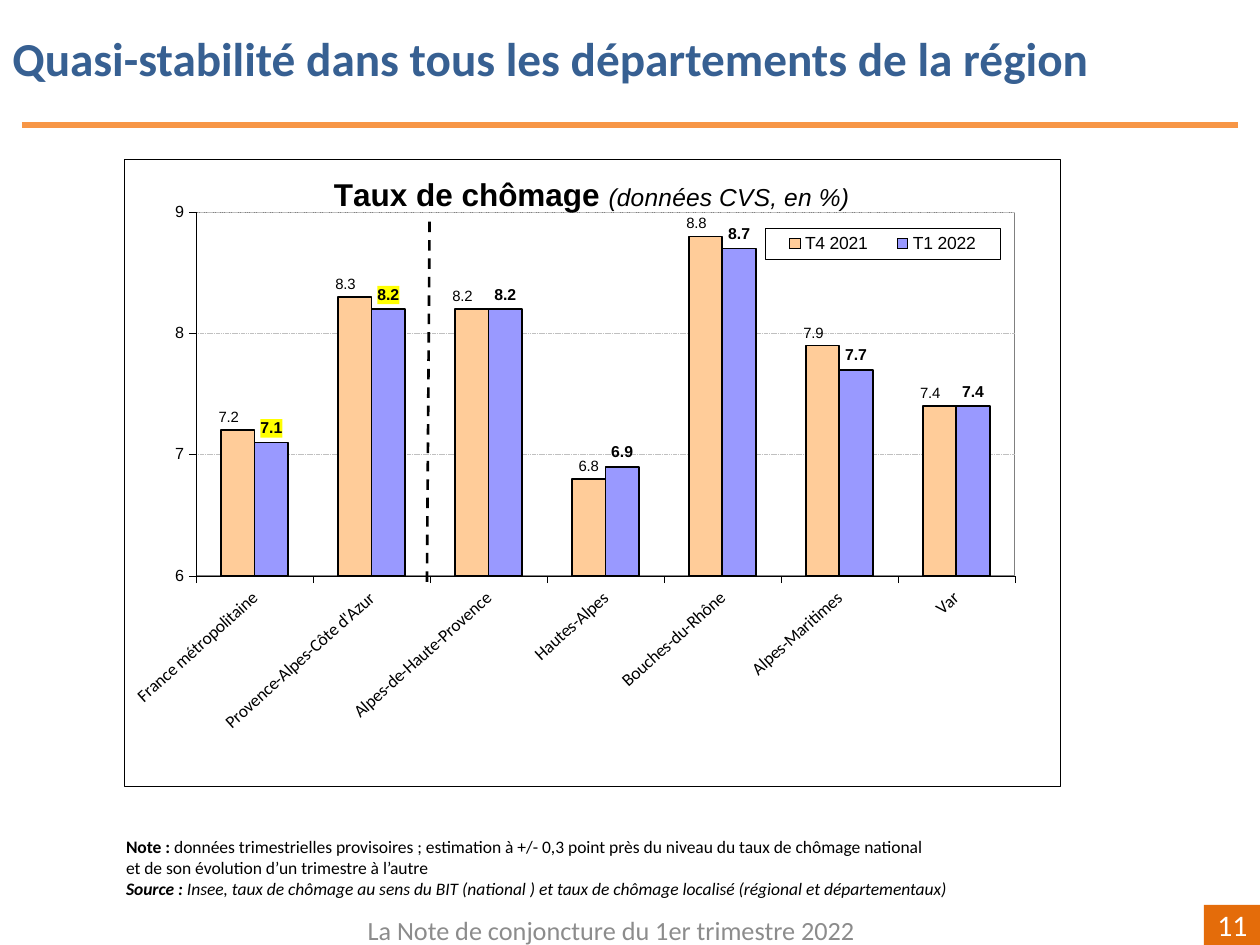
"""Build the slide on unemployment rates by département."""
from pptx import Presentation
from pptx.chart.data import CategoryChartData
from pptx.dml.color import RGBColor
from pptx.enum.chart import XL_CHART_TYPE, XL_LABEL_POSITION, XL_LEGEND_POSITION, XL_TICK_MARK
from pptx.enum.dml import MSO_LINE
from pptx.enum.shapes import MSO_CONNECTOR, MSO_SHAPE
from pptx.enum.text import MSO_ANCHOR, PP_ALIGN
from pptx.oxml import parse_xml
from pptx.oxml.ns import nsdecls, qn
from pptx.util import Pt

BLACK = RGBColor(0x00, 0x00, 0x00)
WHITE = RGBColor(0xFF, 0xFF, 0xFF)
BLUE = RGBColor(0x37, 0x60, 0x92)
ORANGE = RGBColor(0xF7, 0x96, 0x46)
DARK_ORANGE = RGBColor(0xE4, 0x6C, 0x0A)
FOOTER_GREY = RGBColor(0x8C, 0x8C, 0x8C)
PLOT_GREY = RGBColor(0x80, 0x80, 0x80)
GRID_GREY = RGBColor(0xC0, 0xC0, 0xC0)
PEACH = RGBColor(0xFF, 0xCC, 0x99)
LAVENDER = RGBColor(0x99, 0x99, 0xFF)
YELLOW = RGBColor(0xFF, 0xFF, 0x00)

LEFT, CENTER, RIGHT = PP_ALIGN.LEFT, PP_ALIGN.CENTER, PP_ALIGN.RIGHT
TOP, MIDDLE = MSO_ANCHOR.TOP, MSO_ANCHOR.MIDDLE
CLUSTERED = XL_CHART_TYPE.COLUMN_CLUSTERED
OUTSIDE_END = XL_LABEL_POSITION.OUTSIDE_END
LEGEND_RIGHT = XL_LEGEND_POSITION.RIGHT
TICK_OUT, TICK_NONE = XL_TICK_MARK.OUTSIDE, XL_TICK_MARK.NONE
DASH, SYS_DASH = MSO_LINE.DASH, MSO_LINE.SQUARE_DOT
STRAIGHT, RECTANGLE = MSO_CONNECTOR.STRAIGHT, MSO_SHAPE.RECTANGLE

AREAS = ["France métropolitaine", "Provence-Alpes-Côte d'Azur", "Alpes-de-Haute-Provence",
         "Hautes-Alpes", "Bouches-du-Rhône", "Alpes-Maritimes", "Var"]
RATES = {"T4 2021": (7.2, 8.3, 8.2, 6.8, 8.8, 7.9, 7.4),
         "T1 2022": (7.1, 8.2, 8.2, 6.9, 8.7, 7.7, 7.4)}
SERIES_FORMATS = [(PEACH, {"size": 8.5, "bold": False}), (LAVENDER, {"size": 9, "bold": True})]
LABEL_SHIFTS = {0: -0.01, 1: -0.01, 2: -0.01, 4: -0.01, 5: -0.01, 6: -0.01}
HIGHLIGHTED = (0, 1)

NOTE = [
    [("Note : ", {"bold": True}),
     ("données trimestrielles provisoires ; estimation à +/- 0,3 point près du niveau "
      "du taux de chômage national", {})],
    [("et de son évolution d’un trimestre à l’autre", {})],
    [("Source : ", {"bold": True, "italic": True}),
     ("Insee, taux de chômage au sens du BIT (national ) et taux de chômage localisé "
      "(régional et départementaux)", {"italic": True})],
]


def style_font(font, size, color=BLACK, name="Calibri", **flags):
    """Set size, colour, typeface and flags of a font."""
    for attribute, value in {"size": Pt(size), "name": name, **flags}.items():
        setattr(font, attribute, value)
    font.color.rgb = color


def style_line(line, color, width, dash=None):
    """Set colour, width and dash of a line."""
    line.color.rgb = color
    line.width = Pt(width)
    if dash is not None:
        line.dash_style = dash


def write(shape, paragraphs, size, color=BLACK, align=LEFT, anchor=TOP, insets=None):
    """Fill a shape with paragraphs given as lists of (text, flags)."""
    frame = shape.text_frame
    frame.word_wrap = True
    frame.vertical_anchor = anchor
    for side, inset in (insets or {}).items():
        setattr(frame, f"margin_{side}", Pt(inset))
    for index, runs in enumerate(paragraphs):
        paragraph = frame.add_paragraph() if index else frame.paragraphs[0]
        paragraph.alignment = align
        for text, flags in runs:
            run = paragraph.add_run()
            run.text = text
            style_font(run.font, size, color, **flags)


def add_text(slide, box, paragraphs, size, **options):
    """Add a text box."""
    write(slide.shapes.add_textbox(*map(Pt, box)), paragraphs, size, **options)


def add_rule(slide, ends, color, width, dash=None):
    """Add a straight line without a shadow."""
    rule = slide.shapes.add_connector(STRAIGHT, *map(Pt, ends))
    style_line(rule.line, color, width, dash)
    rule._element.spPr.append(parse_xml(f"<a:effectLst {nsdecls('a')}/>"))


def add_page_number(slide, box, number):
    """Add the filled page number tile."""
    tile = slide.shapes.add_shape(RECTANGLE, *map(Pt, box))
    tile.shadow.inherit = False
    tile.fill.solid()
    tile.fill.fore_color.rgb = DARK_ORANGE
    tile.line.fill.background()
    write(tile, [[(number, {})]], 17, WHITE, align=RIGHT, anchor=MIDDLE)


def area_format(fill, border=None, width=0.25):
    """Return chart shape properties with a fill and an optional border."""
    outline = "<a:ln><a:noFill/></a:ln>"
    if border is not None:
        outline = (f'<a:ln w="{Pt(width)}"><a:solidFill><a:srgbClr val="{border}"/>'
                   "</a:solidFill></a:ln>")
    return parse_xml(f'<c:spPr {nsdecls("c", "a")}><a:solidFill><a:srgbClr val="{fill}"/>'
                     f"</a:solidFill>{outline}</c:spPr>")


def place(element, after, modes=(), **fractions):
    """Give a chart part a manual layout right after one of its children."""
    for old in element.findall(qn("c:layout")):
        element.remove(old)
    entries = [(mode, "edge") for mode in modes] + list(fractions.items())
    body = "".join(f'<c:{tag} val="{value}"/>' for tag, value in entries)
    layout = parse_xml(f'<c:layout {nsdecls("c")}><c:manualLayout>{body}'
                       "</c:manualLayout></c:layout>")
    if after is None:
        element.insert(0, layout)
    else:
        element.find(qn(after)).addnext(layout)


def style_title(chart):
    """Write the two-part chart title just above the plot."""
    paragraph = chart.chart_title.text_frame.paragraphs[0]
    for text, size, flags in [("Taux de chômage ", 18, {"bold": True, "italic": False}),
                              ("(données CVS, en %)", 14, {"bold": False, "italic": True})]:
        run = paragraph.add_run()
        run.text = text
        style_font(run.font, size, name="Arial", **flags)
    chart.chart_title.include_in_layout = True
    title = chart.chart_title._element
    place(title, "c:tx", ("xMode", "yMode"), x=0.22, y=0.02)
    title.find(qn("c:overlay")).set("val", "1")


def style_axes(chart):
    """Format both axes, their ticks and the grid."""
    areas, rates = chart.category_axis, chart.value_axis
    for attribute, value in {"minimum_scale": 6, "maximum_scale": 9, "major_unit": 1}.items():
        setattr(rates, attribute, value)
    for axis, size, name in [(areas, 10, "Calibri"), (rates, 9.2, "Arial")]:
        axis.major_tick_mark, axis.minor_tick_mark = TICK_OUT, TICK_NONE
        style_line(axis.format.line, BLACK, 0.25)
        style_font(axis.tick_labels.font, size, name=name)
    rates.tick_labels.number_format = "0"
    rates.tick_labels.number_format_is_linked = False
    style_line(rates.major_gridlines.format.line, GRID_GREY, 0.25, SYS_DASH)
    areas._element.find(qn("c:txPr")).find(qn("a:bodyPr")).set("rot", str(-42 * 60000))


def style_series(series, color, label_font):
    """Format the bars and value labels of a series."""
    series.format.fill.solid()
    series.format.fill.fore_color.rgb = color
    style_line(series.format.line, BLACK, 1)
    labels = series.data_labels
    for attribute, value in {"show_value": True, "number_format": "0.0",
                             "number_format_is_linked": False,
                             "position": OUTSIDE_END}.items():
        setattr(labels, attribute, value)
    style_font(labels.font, name="Arial", **label_font)


def point_label(series, index, label_font):
    """Return the label element of one point, in the font of its series."""
    label = series.points[index].data_label
    style_font(label.font, name="Arial", **label_font)
    label.position = OUTSIDE_END
    return series.data_labels._element.findall(qn("c:dLbl"))[-1]


def add_rate_chart(slide, box):
    """Add the clustered column chart of unemployment rates."""
    data = CategoryChartData(number_format="0.0")
    data.categories = AREAS
    for quarter, values in RATES.items():
        data.add_series(quarter, values)
    chart = slide.shapes.add_chart(CLUSTERED, *map(Pt, box), data).chart
    style_font(chart.font, 8.5, name="Arial")
    style_title(chart)
    style_axes(chart)
    plot = chart.plots[0]
    plot.gap_width, plot.overlap, plot.vary_by_categories = 150, 0, False
    for series, (color, label_font) in zip(plot.series, SERIES_FORMATS):
        style_series(series, color, label_font)
    previous, current = plot.series
    for index, shift in LABEL_SHIFTS.items():
        place(point_label(previous, index, SERIES_FORMATS[0][1]), "c:idx", x=shift, y=0)
    for index in HIGHLIGHTED:
        label = point_label(current, index, SERIES_FORMATS[1][1])
        label.find(qn("c:txPr")).addprevious(area_format(YELLOW))
    chart.has_legend = True
    legend = chart.legend
    legend.position, legend.include_in_layout = LEGEND_RIGHT, False
    style_font(legend.font, 10, name="Arial")
    place(legend._element, "c:legendPos", ("xMode", "yMode"), x=0.685, y=0.11, w=0.25, h=0.05)
    legend._element.find(qn("c:txPr")).addprevious(area_format(WHITE, BLACK))
    space = chart._chartSpace
    plot_area = space.chart.plotArea
    place(plot_area, None, ("layoutTarget", "xMode", "yMode"), x=0.077, y=0.085, w=0.874, h=0.58)
    plot_area.find(f".//{qn('c:layoutTarget')}").set("val", "inner")
    plot_area.append(area_format(WHITE, PLOT_GREY, 0.5))
    space.find(qn("c:txPr")).addprevious(area_format(WHITE, BLACK))


def main():
    """Build and save the slide."""
    deck = Presentation()
    deck.slide_width, deck.slide_height = Pt(720), Pt(540)
    slide = deck.slides.add_slide(deck.slide_layouts[6])
    headline = "Quasi-stabilité dans tous les départements de la région"
    add_text(slide, (0, 13, 726, 40), [[(headline, {"bold": True})]], 27, color=BLUE)
    add_rule(slide, (12.5, 71.5, 707.5, 71.5), ORANGE, 3)
    add_page_number(slide, (688, 517, 32, 23), "11")
    add_text(slide, (173.5, 517, 351.5, 29), [[("La Note de conjoncture du 1er trimestre 2022", {})]],
             15, color=FOOTER_GREY, align=CENTER, anchor=MIDDLE)
    add_text(slide, (70.5, 475.5, 492, 38), NOTE, 10,
             insets={"left": 1.5, "top": 2, "right": 0, "bottom": 0})
    add_rate_chart(slide, (70.75, 90.75, 535.5, 358.5))
    add_rule(slide, (244, 332.5, 245.5, 124), BLACK, 1.5, DASH)
    deck.save("out.pptx")


if __name__ == "__main__":
    main()
